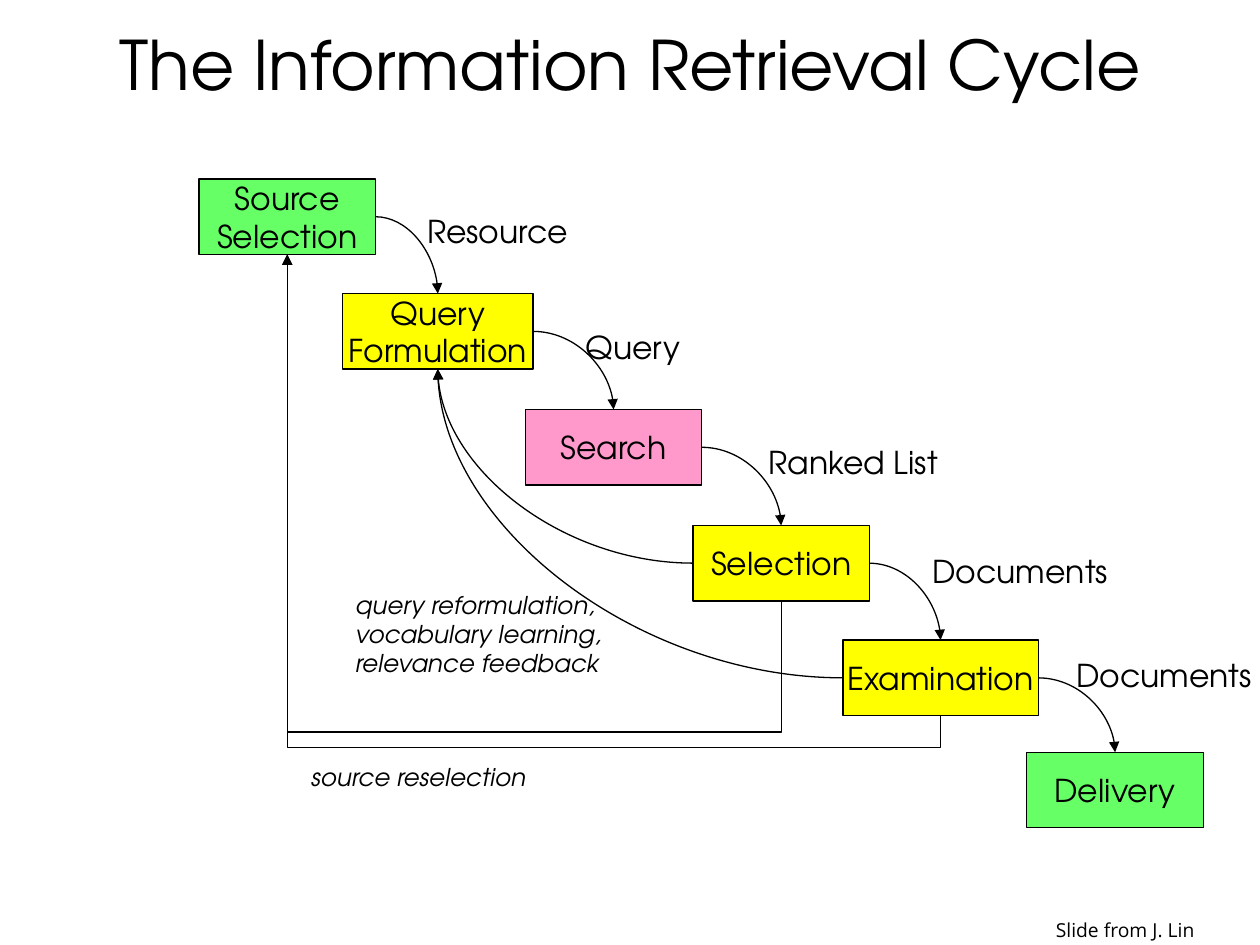
import lxml.etree
import pptx
import pptx.dml.color
import pptx.enum.shapes
import pptx.enum.text
import pptx.oxml.ns
import pptx.util

Inches = pptx.util.Inches
Align = pptx.enum.text.PP_ALIGN
Anchor = pptx.enum.text.MSO_ANCHOR
qn = pptx.oxml.ns.qn

FACE = "TeX Gyre Adventor"
BLACK = "000000"
GREEN = "66FF66"
YELLOW = "FFFF00"
PINK = "FF99CC"


def paint(target, color):
    if hasattr(target, "solid"):
        target.solid()
        target = target.fore_color
    target.rgb = pptx.dml.color.RGBColor.from_string(color)


def write(shape, text, align, frame_format, font_format):
    frame = shape.text_frame
    margins = dict.fromkeys(("margin_left", "margin_top", "margin_right", "margin_bottom"), Inches(0.05))
    for name, value in {**margins, **frame_format}.items():
        setattr(frame, name, value)
    frame.text = text
    for para in frame.paragraphs:
        para.alignment = align
        for span in para.runs:
            for name, value in font_format.items():
                setattr(span.font, name, value)
            paint(span.font.color, BLACK)


deck = pptx.Presentation()
deck.slide_width = Inches(10)
deck.slide_height = Inches(7.5)
page = deck.slides.add_slide(deck.slide_layouts[6])
shapes = page.shapes

label_font = {"name": FACE, "size": pptx.util.Pt(18)}
note_font = {"name": FACE, "size": pptx.util.Pt(14), "italic": True}
centered = {"word_wrap": False, "vertical_anchor": Anchor.MIDDLE}
loose = {"word_wrap": False, "vertical_anchor": Anchor.TOP}

title = shapes.add_textbox(Inches(0.5), Inches(0), Inches(9), Inches(1.01))
write(title, "The Information Retrieval Cycle", Align.CENTER,
      {"word_wrap": True, "vertical_anchor": Anchor.MIDDLE},
      {"name": FACE, "size": pptx.util.Pt(39)})

steps = [
    ("Source\nSelection", 1.58, 1.42, 1.4, GREEN),
    ("Query\nFormulation", 2.72, 2.33, 1.51, YELLOW),
    ("Search", 4.17, 3.25, 1.4, PINK),
    ("Selection", 5.5, 4.17, 1.4, YELLOW),
    ("Examination", 6.69, 5.08, 1.55, YELLOW),
    ("Delivery", 8.15, 5.97, 1.4, GREEN),
]
boxes = []
for text, left, top, width, color in steps:
    box = shapes.add_shape(pptx.enum.shapes.MSO_SHAPE.RECTANGLE,
                           Inches(left), Inches(top), Inches(width), Inches(0.6))
    box.shadow.inherit = False
    paint(box.fill, color)
    paint(box.line.fill, BLACK)
    box.line.width = pptx.util.Pt(0.75)
    write(box, text, Align.CENTER, centered, label_font)
    boxes.append(box)
source, query, search, selection, examination, delivery = boxes

TOP, BOTTOM, RIGHT, LEFT = 0, 2, 3, 1
curves = [(start, RIGHT, end, TOP) for start, end in zip(boxes, boxes[1:])]
curves += [(start, LEFT, query, BOTTOM) for start in (examination, selection)]
arrows = []
for start, start_site, end, end_site in curves:
    curve = shapes.add_connector(pptx.enum.shapes.MSO_CONNECTOR.CURVE, 0, 0, 0, 0)
    curve.begin_connect(start, start_site)
    curve.end_connect(end, end_site)
    curve._element.spPr.find(qn("a:prstGeom")).set("prst", "curvedConnector2")
    arrows.append(curve)

source_x = source.left + source.width // 2
for start, turn in ((examination, 5.93), (selection, 5.81)):
    start_x = start.left + start.width // 2
    outline = shapes.build_freeform(start_x, start.top + start.height, scale=1.0)
    outline.add_line_segments([(start_x, Inches(turn)), (source_x, Inches(turn)),
                               (source_x, source.top + source.height)], close=False)
    route = outline.convert_to_shape()
    route.fill.background()
    arrows.append(route)

for arrow in arrows:
    paint(arrow.line.fill, BLACK)
    arrow.line.width = pptx.util.Pt(0.75)
    properties = arrow._element.spPr
    lxml.etree.SubElement(properties.find(qn("a:ln")), qn("a:tailEnd"), type="triangle")
    lxml.etree.SubElement(properties, qn("a:effectLst"))

labels = [
    ("Resource", 3.34, 1.63, 1.24, 0.41, label_font),
    ("Query", 4.6, 2.55, 0.85, 0.41, label_font),
    ("Ranked List", 6.05, 3.47, 1.46, 0.41, label_font),
    ("Documents", 7.35, 4.33, 1.51, 0.41, label_font),
    ("Documents", 8.49, 5.16, 1.51, 0.41, label_font),
    ("query reformulation,\nvocabulary learning,\nrelevance feedback", 2.77, 4.63, 2.07, 0.81, note_font),
    ("source reselection", 2.42, 6, 2.2, 0.34, note_font),
    ("Slide from J. Lin", 8.33, 7.24, 1.21, 0.28, {"name": "Open Sans", "size": pptx.util.Pt(11)}),
]
for text, left, top, width, height, font_format in labels:
    label = shapes.add_textbox(Inches(left), Inches(top), Inches(width), Inches(height))
    write(label, text, Align.LEFT, loose, font_format)

deck.save("out.pptx")
